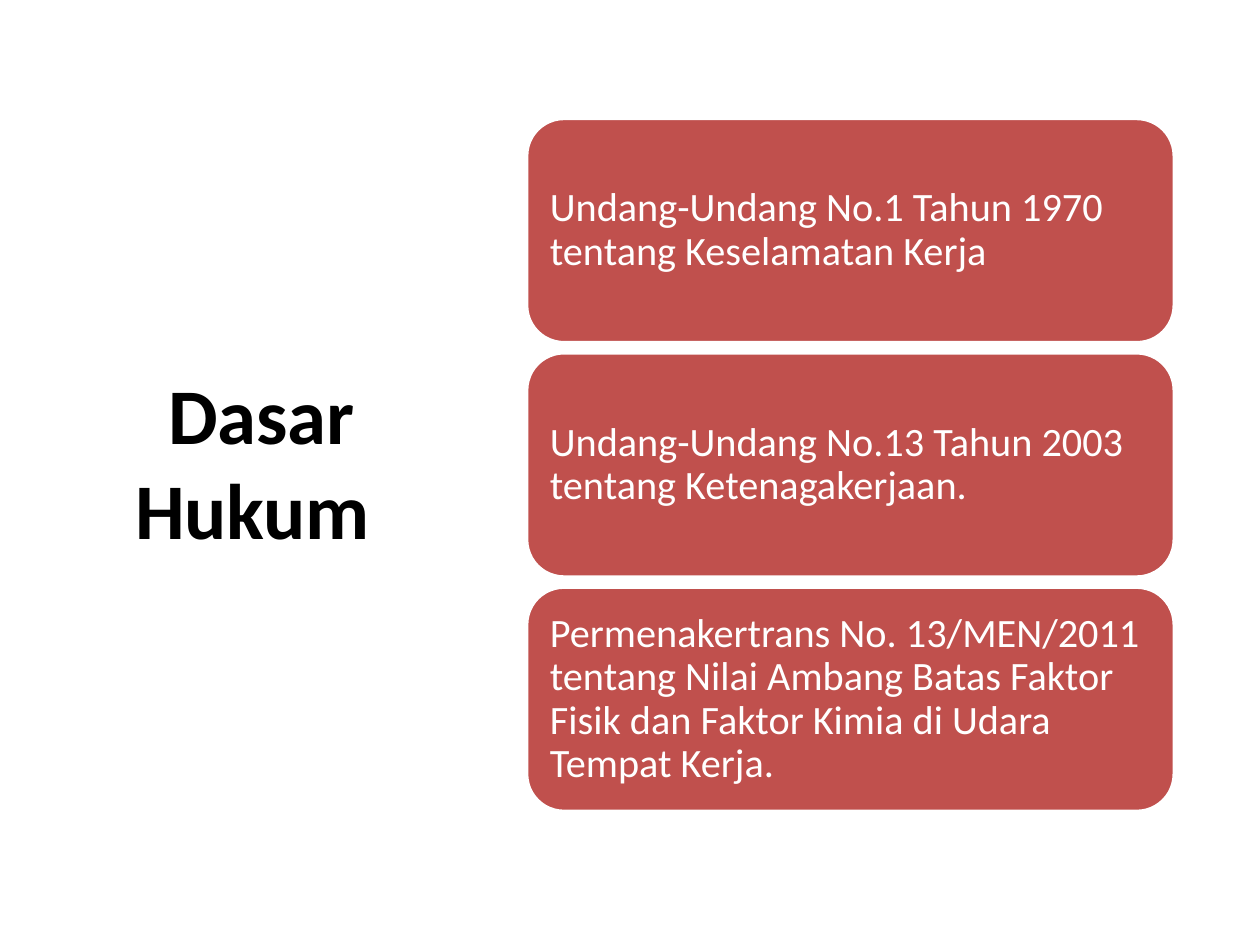
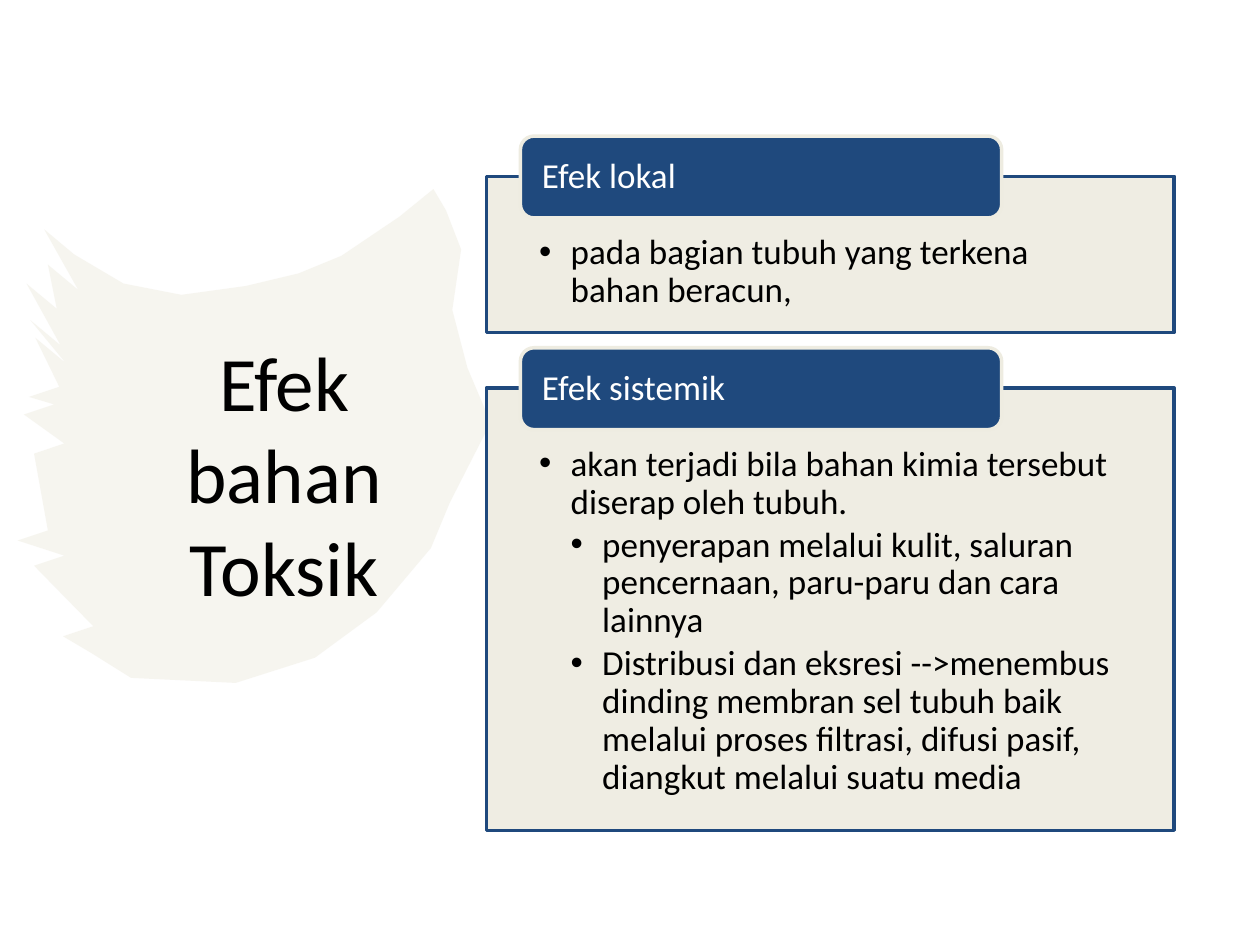
from dataclasses import dataclass

from lxml import etree
from pptx import Presentation
from pptx.dml.color import RGBColor
from pptx.enum.shapes import MSO_SHAPE
from pptx.enum.text import MSO_ANCHOR, MSO_AUTO_SIZE, PP_ALIGN
from pptx.oxml.ns import qn
from pptx.util import Pt

PX = 9144  # one px is a hundredth of an inch
LEFT, CENTER = PP_ALIGN.LEFT, PP_ALIGN.CENTER
TOP, MIDDLE = MSO_ANCHOR.TOP, MSO_ANCHOR.MIDDLE
RECTANGLE, ROUNDED = MSO_SHAPE.RECTANGLE, MSO_SHAPE.ROUNDED_RECTANGLE
NO_AUTOFIT = MSO_AUTO_SIZE.NONE
TITLE_ONLY = 5


@dataclass(frozen=True)
class Theme:
    font: str = "Calibri"
    black: str = "000000"
    white: str = "FFFFFF"
    red: str = "C0504D"
    navy: str = "1F497D"
    cream: str = "EEECE1"
    bold_title_size: int = 45
    title_size: int = 44
    law_size: int = 23
    effect_size: int = 20
    outline: int = 2


theme = Theme()


def write(shape, items, *, size, color, bold=False, align=LEFT, anchor=MIDDLE,
          insets=(10, 5, 10, 5), line_spacing=None, after=0):
    """Fill a shape with (bullet level, text) items; level 0 has no bullet."""
    frame = shape.text_frame
    frame.word_wrap = True
    frame.auto_size = NO_AUTOFIT
    frame.vertical_anchor = anchor
    (frame.margin_left, frame.margin_top,
     frame.margin_right, frame.margin_bottom) = [inset * PX for inset in insets]
    for index, (level, text) in enumerate(items):
        para = frame.add_paragraph() if index else frame.paragraphs[0]
        para.alignment = align
        para.line_spacing = line_spacing
        para.space_after = Pt(after)
        if level:
            properties = para._p.get_or_add_pPr()
            properties.set("marL", str(25 * level * PX))
            properties.set("indent", str(-25 * PX))
            etree.SubElement(properties, qn("a:buFont"), typeface="Arial")
            etree.SubElement(properties, qn("a:buChar"), char="•")
        span = para.add_run()
        span.text = text
        span.font.name = theme.font
        span.font.size = Pt(size)
        span.font.bold = bold
        span.font.color.rgb = RGBColor.from_string(color)


def paint(shape, fill, line=None, opacity=100):
    """Give a shape a flat fill, an optional outline and no shadow."""
    shape.shadow.inherit = False
    shape.fill.solid()
    shape.fill.fore_color.rgb = RGBColor.from_string(fill)
    if opacity < 100:
        color = shape.element.spPr.find(qn("a:solidFill"))[0]
        etree.SubElement(color, qn("a:alpha"), val=str(opacity * 1000))
    if line:
        shape.line.color.rgb = RGBColor.from_string(line)
        shape.line.width = Pt(theme.outline)
    else:
        shape.line.fill.background()


deck = Presentation()
deck.slide_width, deck.slide_height = 1000 * PX, 750 * PX

# Titles of both slides
TITLES = [
    ("Dasar Hukum ", (69, 61, 277, 609), theme.bold_title_size, True),
    ("Efek bahan Toksik", (82, 75, 287, 601), theme.title_size, False),
]
for text, place, size, bold in TITLES:
    page = deck.slides.add_slide(deck.slide_layouts[TITLE_ONLY])
    title = page.shapes.title
    title.left, title.top, title.width, title.height = [n * PX for n in place]
    write(title, [(0, text)], size=size, color=theme.black, bold=bold, align=CENTER)
law_page, effect_page = deck.slides

# Slide 1: stack of laws
LAWS = [
    "Undang-Undang No.1 Tahun 1970 tentang Keselamatan Kerja",
    "Undang-Undang No.13 Tahun 2003 tentang Ketenagakerjaan.",
    "Permenakertrans No. 13/MEN/2011 tentang Nilai Ambang Batas Faktor Fisik "
    "dan Faktor Kimia di Udara Tempat Kerja.",
]
LAW_HEIGHT, LAW_GAP = 178, 8
for row, law in enumerate(LAWS):
    top = 94 + row * (LAW_HEIGHT + LAW_GAP)
    box = law_page.shapes.add_shape(ROUNDED, 418 * PX, top * PX, 514 * PX, LAW_HEIGHT * PX)
    paint(box, theme.red, theme.white)
    write(box, [(0, law)], size=theme.law_size, color=theme.white,
          insets=(10, 10, 10, 10), line_spacing=0.9)

# Slide 2: brush stroke behind the title, clockwise from its upper right tip
RIGHT_AND_LOWER_EDGE = [
    (344, 150), (354, 167), (366, 198), (359, 246), (371, 292), (385, 325),
    (385, 344), (357, 399), (342, 435), (299, 486), (250, 522), (187, 542),
    (104, 538), (72, 518),
]
UPPER_EDGE = [(98, 225), (144, 234), (195, 227), (237, 217), (271, 203), (317, 172)]
# Each bristle tip is followed by a notch at a fixed offset
BRISTLES = [
    (-8, [(50, 505), (27, 449), (14, 429), (27, 360), (19, 329), (23, 315)]),
    (20, [(28, 268), (24, 254), (21, 225), (38, 210), (35, 182)]),
]
NOTCH_DEPTH = 24
outline = list(RIGHT_AND_LOWER_EDGE)
for notch_drop, tips in BRISTLES:
    for x, y in tips:
        outline += [(x, y), (x + NOTCH_DEPTH, y + notch_drop)]
outline += UPPER_EDGE
builder = effect_page.shapes.build_freeform(*outline[0], scale=PX)
builder.add_line_segments(outline[1:], close=True)
brush = builder.convert_to_shape()
paint(brush, theme.cream, opacity=50)
effect_page.shapes.title.element.addprevious(brush.element)

# Slide 2: panels, each with a heading tab over its upper edge
EFFECTS = [
    ("Efek lokal", 140, 124, [(1, "pada bagian tubuh yang terkena bahan beracun,")]),
    ("Efek sistemik", 308, 351, [
        (1, "akan terjadi bila bahan kimia tersebut diserap oleh tubuh."),
        (2, "penyerapan melalui kulit, saluran pencernaan, paru-paru dan cara lainnya"),
        (2, "Distribusi dan eksresi -->menembus dinding membran sel tubuh baik "
            "melalui proses filtrasi, difusi pasif, diangkut melalui suatu media"),
    ]),
]
TAB_RISE = 32
for heading, top, height, points in EFFECTS:
    panel = effect_page.shapes.add_shape(RECTANGLE, 386 * PX, top * PX, 546 * PX, height * PX)
    paint(panel, theme.cream, theme.navy, opacity=90)
    write(panel, points, size=theme.effect_size, color=theme.black, anchor=TOP,
          insets=(42, 46, 42, 16), line_spacing=0.9, after=3)
    tab = effect_page.shapes.add_shape(
        ROUNDED, 413 * PX, (top - TAB_RISE) * PX, 382 * PX, 65 * PX)
    paint(tab, theme.navy, theme.cream)
    write(tab, [(0, heading)], size=theme.effect_size, color=theme.white,
          insets=(14, 0, 14, 0), line_spacing=0.9)

deck.save("out.pptx")
